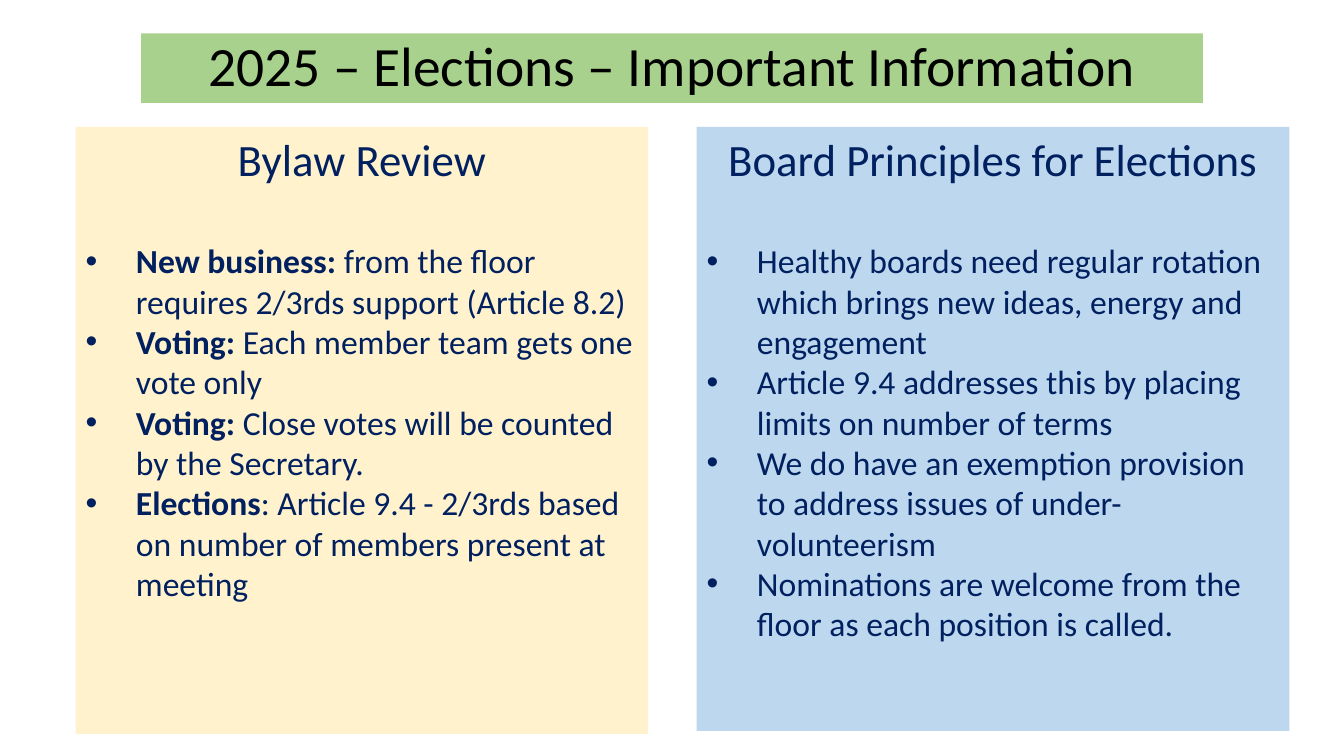
from lxml.etree import SubElement
from pptx import Presentation
from pptx.dml.color import RGBColor
from pptx.enum.shapes import MSO_SHAPE as Shape
from pptx.enum.text import MSO_ANCHOR as Anchor, PP_ALIGN as Align
from pptx.oxml.ns import qn
from pptx.util import Inches, Pt

WIDE, HIGH = Inches(13.33), Inches(7.5)
GREEN = RGBColor(0xA9, 0xD1, 0x8E)
CREAM = RGBColor(0xFF, 0xF2, 0xCC)
BLUE = RGBColor(0xBD, 0xD7, 0xEE)
NAVY = RGBColor(0x00, 0x20, 0x60)
BLACK = RGBColor(0, 0, 0)

HEAD = {"alignment": Align.CENTER, "space_after": Pt(39)}
ITEM = {"alignment": Align.LEFT}
TITLE = {"alignment": Align.CENTER, "line_spacing": 0.9}

BYLAWS = [
    ("New business: ", "from the floor requires 2/3rds support (Article 8.2)"),
    ("Voting: ", "Each member team gets one vote only"),
    ("Voting: ", "Close votes will be counted by the Secretary."),
    ("Elections", ": Article 9.4 - 2/3rds based on number of members present at meeting"),
]
BOARD = [
    ("", "Healthy boards need regular rotation which brings new ideas, energy and engagement"),
    ("", "Article 9.4 addresses this by placing limits on number of terms"),
    ("", "We do have an exemption provision to address issues of under-volunteerism"),
    ("", "Nominations are welcome from the floor as each position is called."),
]


def style(item, form):
    for name, value in form.items():
        setattr(item, name, value)


def add_panel(slide, area, fill, anchor):
    left, top, width, height = area
    panel = slide.shapes.add_shape(
        Shape.RECTANGLE,
        int(WIDE * left / 100), int(HIGH * top / 100),
        int(WIDE * width / 100), int(HIGH * height / 100))
    panel.shadow.inherit = False
    panel.fill.solid()
    panel.fill.fore_color.rgb = fill
    panel.line.fill.background()
    style(panel.text_frame, {"word_wrap": True, "vertical_anchor": anchor})
    return panel.text_frame


def add_text(para, parts, size, color, form):
    style(para, form)
    style(para.font, {"name": "Calibri", "size": Pt(size)})
    for text, bold in parts:
        if text:
            run = para.add_run()
            run.text = text
            style(run.font, {"name": "Calibri", "size": Pt(size), "bold": bold})
            run.font.color.rgb = color


def add_bullet(para):
    props = para._p.get_or_add_pPr()
    props.set("marL", str(Inches(0.5)))
    props.set("indent", str(-Inches(0.5)))
    SubElement(props, qn("a:buFont"), typeface="Arial")
    SubElement(props, qn("a:buChar"), char="•")


def add_list(slide, area, fill, head, items):
    frame = add_panel(slide, area, fill, Anchor.TOP)
    add_text(frame.paragraphs[0], [(head, False)], 32, NAVY, HEAD)
    for label, text in items:
        para = frame.add_paragraph()
        add_bullet(para)
        add_text(para, [(label, True), (text, False)], 24, NAVY, ITEM)


def main():
    deck = Presentation()
    style(deck, {"slide_width": WIDE, "slide_height": HIGH})
    slide = deck.slides.add_slide(deck.slide_layouts[6])
    title = add_panel(slide, (10.5, 4.4, 79, 9.2), GREEN, Anchor.MIDDLE)
    add_text(title.paragraphs[0], [("2025 – Elections – Important Information", False)],
             39.6, BLACK, TITLE)
    add_list(slide, (5.63, 16.8, 42.6, 80.27), CREAM, "Bylaw Review", BYLAWS)
    add_list(slide, (51.83, 16.8, 44.1, 79.87), BLUE,
             "Board Principles for Elections", BOARD)
    deck.save("out.pptx")


if __name__ == "__main__":
    main()
